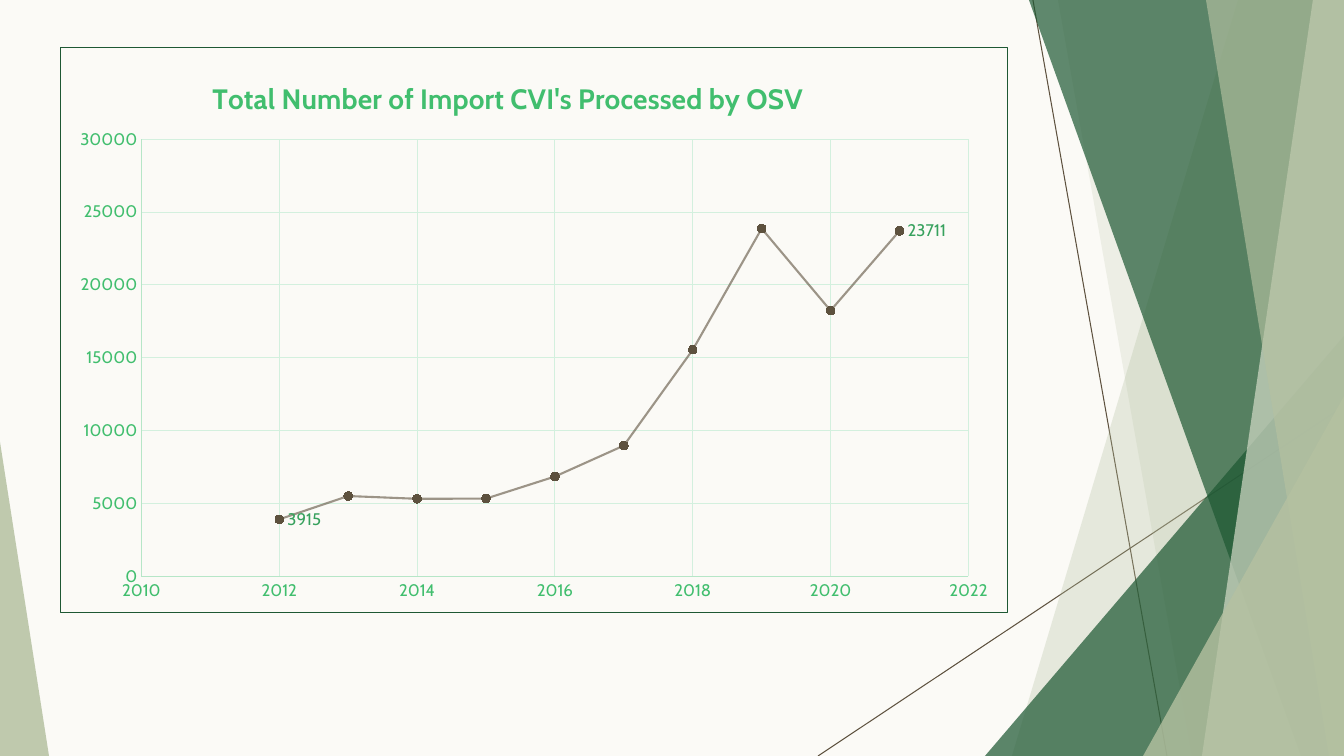
from dataclasses import dataclass

from lxml import etree
from pptx import Presentation
from pptx.chart.data import XyChartData
from pptx.dml.color import RGBColor
from pptx.enum.chart import (XL_CHART_TYPE, XL_LABEL_POSITION,
                             XL_MARKER_STYLE, XL_TICK_MARK)
from pptx.enum.shapes import MSO_CONNECTOR, MSO_SHAPE
from pptx.oxml.ns import qn
from pptx.util import Emu, Pt

SCATTER = XL_CHART_TYPE.XY_SCATTER_LINES
RIGHT = XL_LABEL_POSITION.RIGHT
CIRCLE = XL_MARKER_STYLE.CIRCLE
NO_TICK = XL_TICK_MARK.NONE
STRAIGHT = MSO_CONNECTOR.STRAIGHT
WEDGE = MSO_SHAPE.ISOSCELES_TRIANGLE

WIDE, HIGH = 1344, 756
SCALE = 914400 / 100.8


@dataclass(frozen=True)
class Theme:
    back: str = "FBFAF6"
    brown: str = "5D513E"
    dark: str = "1E5833"
    sage: str = "B5C1A1"
    pale: str = "D3DAC7"
    green: str = "41BE6E"
    label: str = "37A15D"
    axis: str = "B6E6C7"
    grid: str = "D3F0DE"
    face: str = "Cabin"
    head: int = 20
    text: int = 12
    base: int = 10
    thin: float = 0.75
    thick: float = 1.5


LOOK = Theme()
FIRST = 2012
COUNTS = [3915, 5517, 5325, 5338, 6854, 8977, 15552, 23872, 18242, 23711]


def px(n):
    return Emu(round(n * SCALE))


def ink(font, size, color, bold=False):
    font.name = LOOK.face
    font.size = Pt(size)
    font.bold = bold
    font.color.rgb = RGBColor.from_string(color)


def write(frame, text, **form):
    run = frame.paragraphs[0].add_run()
    run.text = text
    ink(run.font, **form)


def stroke(line, color, width):
    line.color.rgb = RGBColor.from_string(color)
    line.width = Pt(width)


def fade(node, share):
    etree.SubElement(node, qn("a:alpha"), val=str(share * 1000))


def tint(shape, color, share):
    shape.shadow.inherit = False
    shape.line.fill.background()
    shape.fill.solid()
    shape.fill.fore_color.rgb = RGBColor.from_string(color)
    fade(shape.element.xpath("./p:spPr/a:solidFill/a:srgbClr")[0], share)


def rule(slide, box, ends):
    left, top = box[:2]
    x1, y1, x2, y2 = ends
    line = slide.shapes.add_connector(
        STRAIGHT, px(left + x1), px(top + y1), px(left + x2), px(top + y2))
    stroke(line.line, LOOK.brown, LOOK.thin)
    etree.SubElement(line.element.spPr, qn("a:effectLst"))


def slant(slide, box, head, foot, color, share):
    left, top, wide, high = box
    points = [(wide, 0), (wide, high), (foot, high)]
    form = slide.shapes.build_freeform(px(left + head), px(top), scale=1.0)
    form.add_line_segments([(px(left + x), px(top + y)) for x, y in points])
    tint(form.convert_to_shape(), color, share)


def wedge(slide, box, peak, color, share):
    shape = slide.shapes.add_shape(WEDGE, *map(px, box))
    shape.adjustments[0] = peak
    tint(shape, color, share)


def corner(slide, box, x, y, color, share):
    left, top, wide, high = box
    wedge(slide, (left + x, top + y, wide - x, high - y), 1, color, share)


def art(slide, box):
    rule(slide, box, (215, 0, 349, 756))
    rule(slide, box, (526, 406, 0, 756))
    slant(slide, box, 420, 194, LOOK.sage, 30)
    slant(slide, box, 240, 374, LOOK.sage, 20)
    corner(slide, box, 167, 336, LOOK.dark, 72)
    slant(slide, box, 211, 483, LOOK.dark, 70)
    slant(slide, box, 495, 384, LOOK.pale, 70)
    slant(slide, box, 388, 511, LOOK.sage, 65)
    corner(slide, box, 325, 396, LOOK.sage, 80)


def place(node, spot, **sides):
    for old in node.findall(qn("c:layout")):
        node.remove(old)
    layout = etree.Element(qn("c:layout"))
    node.insert(spot, layout)
    manual = etree.SubElement(layout, qn("c:manualLayout"))
    for name, value in sides.items():
        etree.SubElement(manual, qn("c:" + name), val=str(value))


def scale_axis(axis, low, top, step):
    axis.minimum_scale = low
    axis.maximum_scale = top
    axis.major_unit = step
    axis.major_tick_mark = NO_TICK
    axis.minor_tick_mark = NO_TICK
    axis.has_major_gridlines = True
    stroke(axis.major_gridlines.format.line, LOOK.grid, LOOK.thin)
    stroke(axis.format.line, LOOK.axis, LOOK.thin)
    axis.tick_labels.number_format = "General"
    axis.tick_labels.number_format_is_linked = False
    ink(axis.tick_labels.font, LOOK.text, LOOK.green)


def frame_chart(root):
    edge = etree.Element(qn("c:spPr"))
    etree.SubElement(edge, qn("a:noFill"))
    line = etree.SubElement(edge, qn("a:ln"), w=str(Pt(LOOK.thin)))
    fill = etree.SubElement(line, qn("a:solidFill"))
    etree.SubElement(fill, qn("a:srgbClr"), val=LOOK.dark)
    root.find(qn("c:chart")).addnext(edge)


def style_series(chart):
    plot = chart.plots[0]
    plot.vary_by_categories = False
    series = plot.series[0]
    series.smooth = False
    stroke(series.format.line, LOOK.brown, LOOK.thick)
    fade(chart.element.xpath(".//c:ser/c:spPr/a:ln//a:srgbClr")[0], 60)
    marker = series.marker
    marker.style = CIRCLE
    marker.size = 6
    marker.format.fill.solid()
    marker.format.fill.fore_color.rgb = RGBColor.from_string(LOOK.brown)
    marker.format.line.fill.background()
    for spot in (0, len(COUNTS) - 1):
        label = series.points[spot].data_label
        ink(label.font, LOOK.text, LOOK.label)
        label.position = RIGHT


def trend(slide, box):
    wide, high = box[2:]
    data = XyChartData()
    series = data.add_series("Series 1")
    for year, count in enumerate(COUNTS, FIRST):
        series.add_data_point(year, count)
    chart = slide.shapes.add_chart(SCATTER, *map(px, box), data).chart
    ink(chart.font, LOOK.base, LOOK.dark)
    chart.has_legend = False
    chart.has_title = True
    write(chart.chart_title.text_frame,
          "Total Number of Import CVI's Processed by OSV",
          size=LOOK.head, color=LOOK.green, bold=True)
    chart.chart_title.include_in_layout = False
    scale_axis(chart.category_axis, 2010, 2022, 2)
    scale_axis(chart.value_axis, 0, 30000, 5000)
    style_series(chart)
    frame_chart(chart.element)
    place(chart.element.xpath("./c:chart/c:title")[0], 1,
          xMode="edge", yMode="edge", x=147 / wide, y=26 / high)
    place(chart.element.xpath("./c:chart/c:plotArea")[0], 0,
          layoutTarget="inner", xMode="edge", yMode="edge",
          x=81 / wide, y=92 / high, w=828 / wide, h=438 / high)


def main():
    deck = Presentation()
    deck.slide_width, deck.slide_height = px(WIDE), px(HIGH)
    slide = deck.slides.add_slide(deck.slide_layouts[6])
    slide.background.fill.solid()
    slide.background.fill.fore_color.rgb = RGBColor.from_string(LOOK.back)
    art(slide, (818, 0, 526, HIGH))
    wedge(slide, (0, 442, 49, 314), 0, LOOK.sage, 85)
    trend(slide, (60, 47, 948, 566))
    deck.save("out.pptx")


if __name__ == "__main__":
    main()
